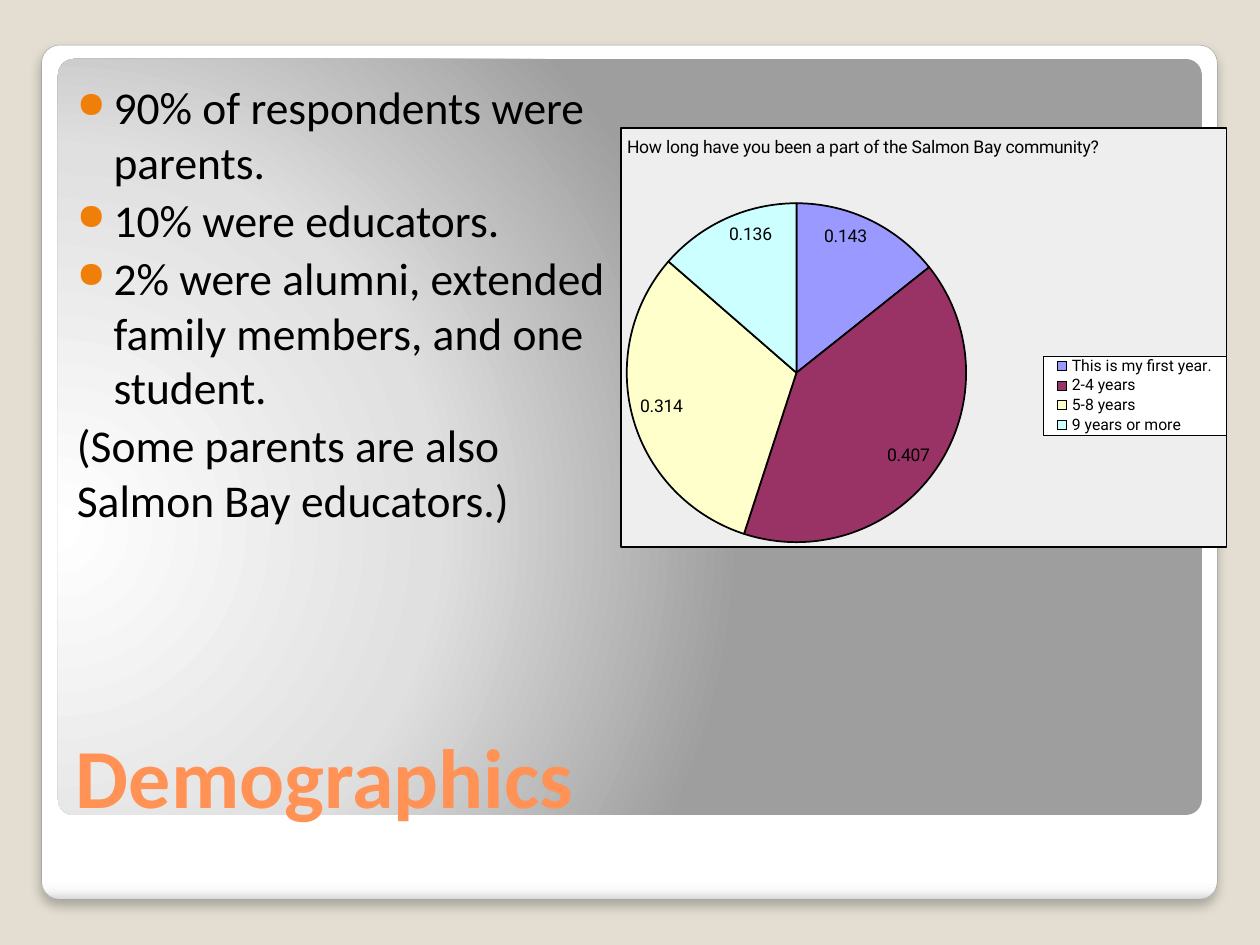
from pptx import Presentation
from pptx.chart.data import CategoryChartData
from pptx.dml.color import RGBColor
from pptx.enum.chart import XL_CHART_TYPE as ChartType, XL_LABEL_POSITION as LabelPosition
from pptx.enum.chart import XL_LEGEND_POSITION as LegendPosition
from pptx.enum.shapes import MSO_SHAPE as Shape
from pptx.enum.text import MSO_ANCHOR as Anchor, MSO_AUTO_SIZE as AutoSize, PP_ALIGN as Align
from pptx.oxml import parse_xml
from pptx.oxml.ns import nsdecls, qn
from pptx.util import Cm, Pt

BACKGROUND = RGBColor(0xE3, 0xDE, 0xD1)
FRAME_LINE = RGBColor(0xA2, 0xA1, 0xA1)
TITLE_ORANGE = RGBColor(0xFF, 0x92, 0x54)
BULLET_ORANGE = RGBColor(0xF0, 0x7F, 0x09)
BLACK = RGBColor(0, 0, 0)
WHITE = RGBColor(0xFF, 0xFF, 0xFF)
CHART_GREY = RGBColor(0xEE, 0xEE, 0xEE)
SLICE_COLORS = [
    RGBColor(0x99, 0x99, 0xFF),
    RGBColor(0x99, 0x33, 0x66),
    RGBColor(0xFF, 0xFF, 0xCC),
    RGBColor(0xCC, 0xFF, 0xFF),
]


def make_element(markup):
    """Return the XML element described by markup that uses the a: and c: prefixes."""
    return parse_xml(f"<root {nsdecls('a', 'c')}>{markup}</root>")[0]


def write_text(paragraph, text, size, color, font="Calibri", bold=False, before=0):
    paragraph.alignment = Align.LEFT
    paragraph.space_before = Pt(before)
    run = paragraph.add_run()
    run.text = text
    run.font.name = font
    run.font.size = Pt(size)
    run.font.bold = bold
    run.font.color.rgb = color


presentation = Presentation()
presentation.slide_width, presentation.slide_height = Cm(25.4), Cm(19.05)
slide = presentation.slides.add_slide(presentation.slide_layouts[5])
slide.background.fill.solid()
slide.background.fill.fore_color.rgb = BACKGROUND
title = slide.shapes.title

# White frame and grey panel, both behind the title
panels = [
    ((0.84, 0.91, 23.7, 17.22),
     [(0, "FFFFFF"), (98, "FFFFFF"), (99, "F7F7F7"), (100, "D9D9D9")],
     '<a:lin ang="5400000" scaled="0"/>'),
    ((1.17, 1.19, 23.06, 15.24),
     [(0, "FFFFFF"), (55, "E0E0E0"), (100, "9E9E9E")],
     '<a:path path="circle">'
     '<a:fillToRect l="-20000" t="62000" r="120000" b="38000"/></a:path>'),
]
panel_shapes = []
for box, stops, direction in panels:
    panel = slide.shapes.add_shape(Shape.ROUNDED_RECTANGLE, *map(Cm, box))
    panel.adjustments[0] = 0.021
    panel.shadow.inherit = False
    panel.line.fill.background()
    stop_markup = "".join(
        f'<a:gs pos="{position * 1000}"><a:srgbClr val="{color}"/></a:gs>'
        for position, color in stops)
    panel.element.spPr.find(qn("a:prstGeom")).addnext(make_element(
        f'<a:gradFill rotWithShape="1"><a:gsLst>{stop_markup}</a:gsLst>{direction}</a:gradFill>'))
    title.element.addprevious(panel.element)
    panel_shapes.append(panel)

frame = panel_shapes[0]
frame.line.color.rgb = FRAME_LINE
frame.line.width = Pt(0.25)
frame.element.spPr.find(qn("a:effectLst")).append(make_element(
    f'<a:outerShdw blurRad="{Pt(6)}" dist="{Pt(4)}" dir="5400000" algn="t" rotWithShape="0">'
    '<a:srgbClr val="000000"><a:alpha val="25000"/></a:srgbClr></a:outerShdw>'))

# Title and body text
title.left, title.top, title.width, title.height = Cm(1.4), Cm(13.84), Cm(22.73), Cm(2.92)
body = slide.shapes.add_textbox(Cm(1.42), Cm(1.47), Cm(10.92), Cm(12.19))
for shape, anchor in [(title, Anchor.BOTTOM), (body, Anchor.TOP)]:
    text_frame = shape.text_frame
    text_frame.word_wrap = True
    text_frame.auto_size = AutoSize.NONE
    text_frame.vertical_anchor = anchor
    text_frame.margin_left = text_frame.margin_right = Cm(0.13)
    text_frame.margin_top = text_frame.margin_bottom = Cm(0.13)
write_text(title.text_frame.paragraphs[0], "Demographics", 48, TITLE_ORANGE, bold=True)

body_lines = [
    ("90% of respondents were parents.", True),
    ("10% were educators.", True),
    ("2% were alumni, extended family members, and one student.", True),
    ("(Some parents are also Salmon Bay educators.)", False),
]
for index, (text, bulleted) in enumerate(body_lines):
    paragraph = body.text_frame.paragraphs[0] if index == 0 else body.text_frame.add_paragraph()
    write_text(paragraph, text, 26, BLACK, before=2)
    if bulleted:
        properties = paragraph._p.get_or_add_pPr()
        properties.set("marL", str(Cm(0.74)))
        properties.set("indent", str(-Cm(0.74)))
        for markup in (f'<a:buClr><a:srgbClr val="{BULLET_ORANGE}"/></a:buClr>',
                       '<a:buSzPct val="80000"/>', '<a:buChar char="●"/>'):
            properties.append(make_element(markup))

# Pie chart
chart_data = CategoryChartData(number_format="0.###")
chart_data.categories = ["This is my first year.", "2-4 years", "5-8 years", "9 years or more"]
chart_data.add_series("Series 1", [0.143, 0.407, 0.314, 0.136])
chart = slide.shapes.add_chart(
    ChartType.PIE, Cm(12.5), Cm(2.57), Cm(12.24), Cm(8.48), chart_data).chart
chart.font.name = "Calibri"
chart.font.size = Pt(10)
chart.font.color.rgb = BLACK
write_text(chart.chart_title.text_frame.paragraphs[0],
           "How long have you been a part of the Salmon Bay community?",
           10, BLACK, font="Roboto")
chart.has_legend = True
chart.legend.position = LegendPosition.RIGHT
chart.legend.include_in_layout = True

plot = chart.plots[0]
plot.vary_by_categories = True
plot.has_data_labels = True
labels = plot.data_labels
labels.show_value = True
labels.show_percentage = False
labels.number_format = "0.###"
labels.number_format_is_linked = False
labels.position = LabelPosition.INSIDE_END
for font, size in [(labels.font, 10), (chart.legend.font, 9)]:
    font.name = "Roboto"
    font.size = Pt(size)
    font.color.rgb = BLACK
for index, color in enumerate(SLICE_COLORS):
    slice_format = plot.series[0].points[index].format
    slice_format.fill.solid()
    slice_format.fill.fore_color.rgb = color
    slice_format.line.color.rgb = BLACK
    slice_format.line.width = Pt(1)

# Placement of the chart parts, as fractions of the chart area
chart_element = chart.element.find(qn("c:chart"))
title_element = chart_element.find(qn("c:title"))
plot_element = chart_element.find(qn("c:plotArea"))
legend_element = chart_element.find(qn("c:legend"))
placements = [
    (title_element, 1, {"x": 0.005, "y": 0.01}, ""),
    (plot_element, 0, {"x": 0.005, "y": 0.179, "w": 0.57, "h": 0.809},
     '<c:layoutTarget val="inner"/>'),
    (legend_element, 1, {"x": 0.697, "y": 0.543, "w": 0.303, "h": 0.19}, ""),
]
for part, position, fractions, target in placements:
    for layout in part.findall(qn("c:layout")):
        part.remove(layout)
    modes = "".join(f'<c:{axis}Mode val="edge"/>' for axis in "xy")
    values = "".join(f'<c:{key} val="{value}"/>' for key, value in fractions.items())
    part.insert(position, make_element(
        f"<c:layout><c:manualLayout>{target}{modes}{values}</c:manualLayout></c:layout>"))
title_element.find(qn("c:overlay")).set("val", "1")

# Fills and borders of the chart area, plot area and legend
surfaces = [
    (chart_element, CHART_GREY, 1),
    (plot_element[-1], CHART_GREY, 0),
    (legend_element.find(qn("c:overlay")), WHITE, 0.25),
]
for previous, color, width in surfaces:
    line_fill = f'<a:solidFill><a:srgbClr val="{BLACK}"/></a:solidFill>' if width else "<a:noFill/>"
    previous.addnext(make_element(
        f'<c:spPr><a:solidFill><a:srgbClr val="{color}"/></a:solidFill>'
        f'<a:ln w="{Pt(width)}">{line_fill}</a:ln></c:spPr>'))

presentation.save("out.pptx")
